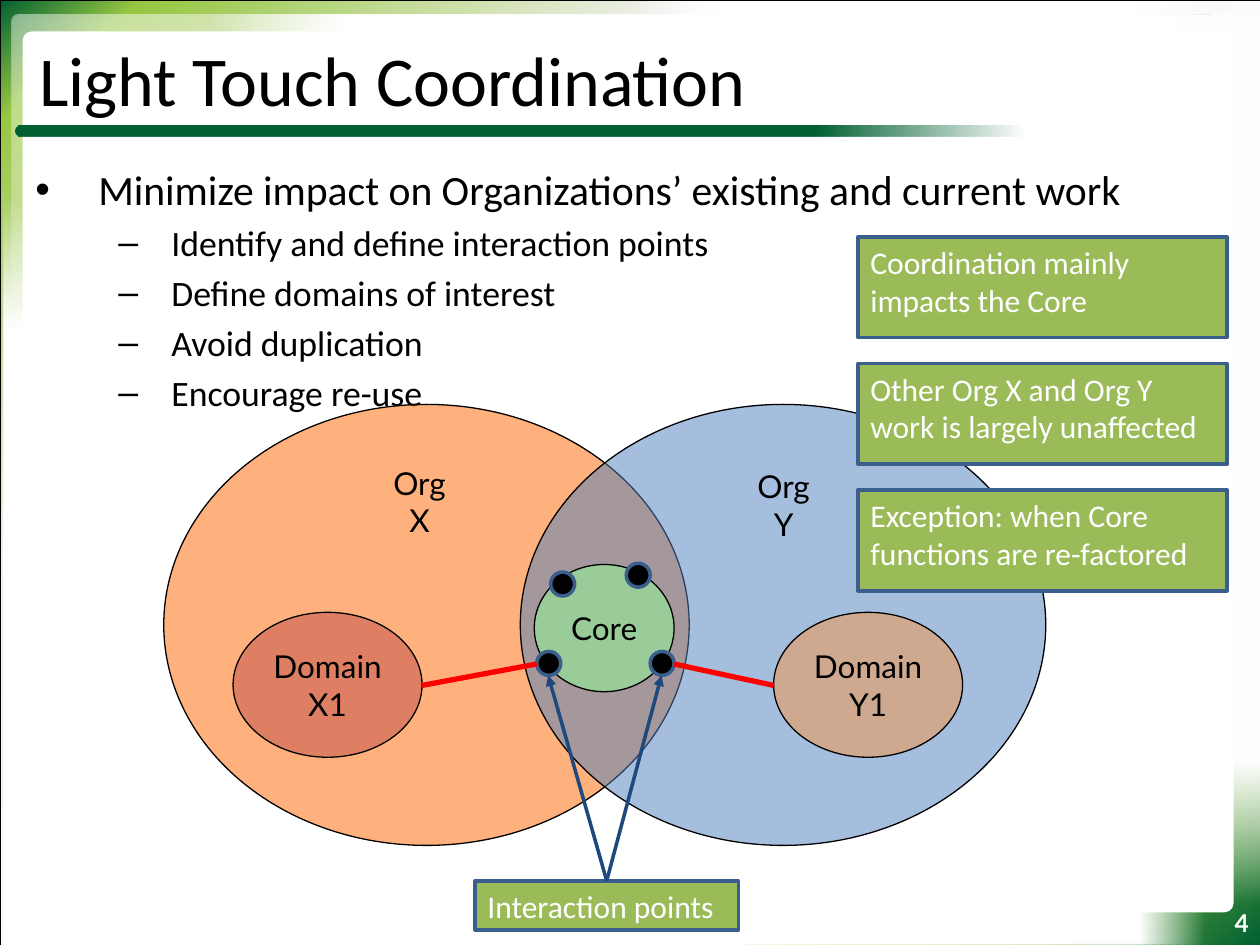
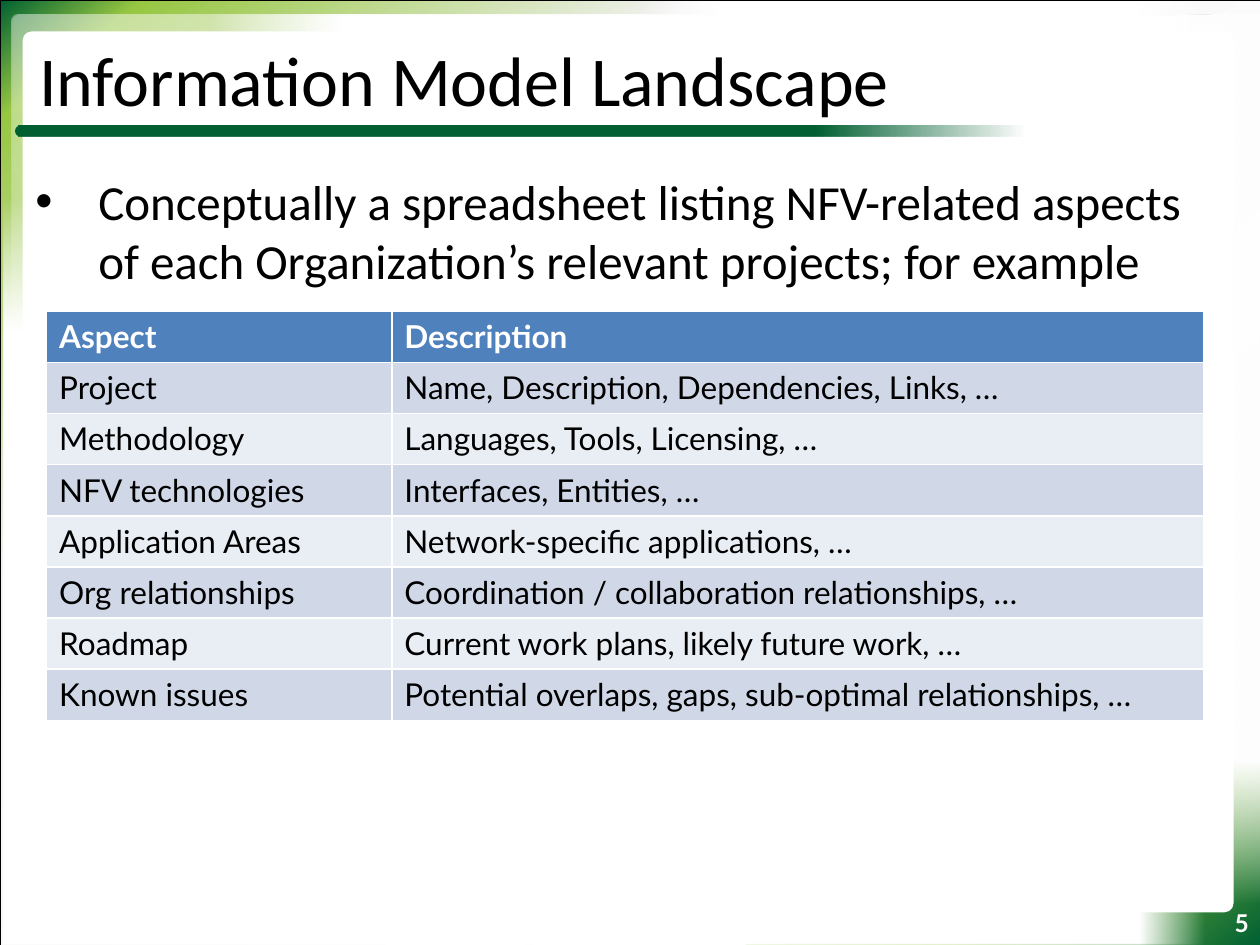
from dataclasses import dataclass

import pptx
import pptx.util
import pptx.dml.color
import pptx.enum.shapes
import pptx.enum.text
import pptx.oxml.ns
from lxml import etree


@dataclass(frozen=True)
class Theme:
    head: str = "Calibri"
    text: str = "Lato"
    black: str = "000000"
    white: str = "FFFFFF"
    pale: str = "F2F2F2"
    green: str = "006032"
    lime: str = "97C642"
    box: str = "9BBB59"
    edge: str = "3A5F8C"
    blue: str = "4F81BD"
    navy: str = "1F497D"
    red: str = "FF0000"
    core: str = "99CC99"
    bands: tuple = ("E9EDF4", "D0D8E8")
    title: float = 40
    lead: float = 28
    main: float = 23.8
    sub: float = 20.4
    label: float = 18
    num: float = 14


T = Theme()
KIND = pptx.enum.shapes.MSO_SHAPE
ALIGN = pptx.enum.text.PP_ALIGN
ANCHOR = pptx.enum.text.MSO_ANCHOR
RGB = pptx.dml.color.RGBColor.from_string
Pt = pptx.util.Pt
qn = pptx.oxml.ns.qn

deck = pptx.Presentation()
deck.slide_width = pptx.util.Inches(10)
deck.slide_height = pptx.util.Inches(7.5)
UNIT = deck.slide_width // 100  # the slide is a grid of 100 columns by 75 rows


def draw(shapes, kind, box, fill, edge=None, width=0.75):
    """Add a shape; fill is a colour, (colour, opacity) or (stops, angle)."""
    shape = shapes.add_shape(kind, *[round(n * UNIT) for n in box])
    shape.shadow.inherit = False
    paint, part = (fill, 100) if isinstance(fill, str) else fill
    if isinstance(paint, str):
        shape.fill.solid()
        shape.fill.fore_color.rgb = RGB(paint)
        if part < 100:
            tone = shape._element.spPr.find(".//" + qn("a:srgbClr"))
            etree.SubElement(tone, qn("a:alpha"), val=str(part * 1000))
    else:
        shape.fill.gradient()
        shape.fill.gradient_angle = -part % 360
        stops = shape._element.spPr.find(".//" + qn("a:gsLst"))
        for old in list(stops):
            stops.remove(old)
        for pos, color, alpha in paint:
            stop = etree.SubElement(stops, qn("a:gs"), pos=str(pos * 1000))
            tone = etree.SubElement(stop, qn("a:srgbClr"), val=color)
            etree.SubElement(tone, qn("a:alpha"), val=str(alpha * 1000))
    if edge:
        shape.line.color.rgb = RGB(edge)
        shape.line.width = Pt(width)
    else:
        shape.line.fill.background()
    return shape


def write(frame, text, size, face=T.text, color=T.black, align=ALIGN.LEFT,
          anchor=ANCHOR.TOP, bold=False):
    frame.text = text
    frame.word_wrap = True
    frame.auto_size = pptx.enum.text.MSO_AUTO_SIZE.NONE
    frame.vertical_anchor = anchor
    for para in frame.paragraphs:
        para.alignment = align
        for run in para.runs:
            run.font.size = Pt(size)
            run.font.name = face
            run.font.bold = bold
            run.font.color.rgb = RGB(color)


# Shared frame: drawn once, then moved to the layout
layout = deck.slide_layouts[1]
for holder in list(layout.placeholders):
    if holder.placeholder_format.idx >= 10:
        holder._element.getparent().remove(holder._element)
coord = deck.slides.add_slide(layout)
model = deck.slides.add_slide(layout)

clear = (T.white, 0)
solid = (T.white, 100)
sweep = [(0, T.green, 100), (6, T.lime, 100), (29, T.pale, 100),
         (69, T.white, 100), (87, T.lime, 100), (100, T.green, 100)]
veil = [(0, T.green, 48), (6, T.lime, 52), (34, T.pale, 50),
        (62, T.white, 48), (91, T.lime, 51), (100, T.green, 52)]
frame = [
    (KIND.RECTANGLE, (0, 0, 100.1, 75), (sweep, 50), T.black, 0.25),
    (KIND.ROUNDED_RECTANGLE, (0.9, 1.2, 95.6, 64.4), (veil, 140)),
    (KIND.RECTANGLE, (12.5, 1.2, 81.8, 68.8),
     ([(5, *clear), (18, *solid), (89, *solid)], 0)),
    (KIND.RECTANGLE, (0.3, 10, 49.1, 65),
     ([(9, *clear), (25, *solid), (87, *solid)], 90)),
    (KIND.RECTANGLE, (48.3, 0.1, 47.3, 74.9),
     ([(5, *clear), (18, *solid), (89, *solid), (100, *clear)], 0)),
    (KIND.RECTANGLE, (93.2, 1.2, 6.9, 71.2),
     ([(13, *solid), (83, *solid), (99, *clear)], 90)),
    (KIND.ROUNDED_RECTANGLE, (1.8, 2.5, 96.1, 69.9), T.white),
    (KIND.RECTANGLE, (42.3, 69.2, 16.9, 5.8), T.white),
    (KIND.OVAL, (1.2, 10, 0.6, 0.8), T.green),
    (KIND.RECTANGLE, (1.5, 10, 79.8, 0.8),
     ([(0, T.green, 100), (79, T.green, 100), (100, T.green, 0)], 0)),
]
for spot, part in enumerate(frame, 2):
    shape = draw(coord.shapes, *part)
    if part[0] == KIND.ROUNDED_RECTANGLE:
        shape.adjustments[0] = 0.01
    layout.shapes._spTree.insert(spot, shape._element)

# Titles, lists and numbers
pages = [
    (coord, "4", "Light Touch Coordination", (1.8, 12.5, 95.5, 20.2), T.main,
     ["Minimize impact on Organizations’ existing and current work",
      "Identify and define interaction points",
      "Define domains of interest", "Avoid duplication", "Encourage re-use"]),
    (model, "5", "Information Model Landscape", (1.8, 13.1, 95.5, 10), T.lead,
     ["Conceptually a spreadsheet listing NFV-related aspects of each "
      "Organization’s relevant projects; for example"]),
]
for slide, num, title, box, size, lines in pages:
    head, body = slide.shapes.title, slide.placeholders[1]
    tag = slide.shapes.add_textbox(0, 0, 0, 0)
    for item, place in ((head, (1.8, 2.5, 91.8, 7.5)), (body, box),
                        (tag, (95.7, 71.6, 4.4, 3.4))):
        item.left, item.top, item.width, item.height = [
            round(n * UNIT) for n in place]
    write(head.text_frame, title, T.title, T.head, anchor=ANCHOR.MIDDLE)
    head.text_frame.margin_left = head.text_frame.margin_right = round(1.3 * UNIT)
    head.text_frame.margin_top = head.text_frame.margin_bottom = round(0.7 * UNIT)
    write(tag.text_frame, num, T.num, color=T.white, align=ALIGN.RIGHT, bold=True)
    write(body.text_frame, "\n".join(lines), size, T.head)
    for row, para in enumerate(body.text_frame.paragraphs):
        para.level = min(row, 1)
        left, hang = (10.8, 4.2) if row else (5, 5)
        props = para._p.get_or_add_pPr()
        props.set("marL", str(round(left * UNIT)))
        props.set("indent", str(round(-hang * UNIT)))
        if row:
            para.runs[0].font.size = Pt(T.sub)
        else:
            para.space_before = Pt(0)

# Overlapping organizations
shapes = coord.shapes
for left, color in ((13, "FF6600"), (41.3, T.blue)):
    draw(shapes, KIND.OVAL, (left, 32.1, 41.7, 35), (color, 51), T.black)
for left, top, name in ((29.5, 36.3, "Org X"), (58.4, 36.6, "Org Y")):
    label = shapes.add_textbox(*[round(n * UNIT) for n in (left, top, 7.6, 4)])
    write(label.text_frame, name, T.label, align=ALIGN.CENTER)

# Callouts
notes = [
    ((37.7, 69.9, 20.9, 3.9), "Interaction points"),
    ((68.1, 18.8, 29.3, 8), "Coordination mainly impacts the Core"),
    ((68.1, 28.85, 29.3, 8), "Other Org X and Org Y work is largely unaffected"),
    ((68.1, 38.9, 29.3, 8), "Exception: when Core functions are re-factored"),
]
cards = []
for box, text in notes:
    card = draw(shapes, KIND.RECTANGLE, box, T.box, T.edge, 2)
    write(card.text_frame, text, T.label, T.head, T.white)
    cards.append(card)

# Domains, core and its interaction points
rounds = [
    ((18.5, 48.6, 15, 11.5), ("C0504D", 51), "Domain X1"),
    ((61.4, 48.6, 15, 11.5), ("F79646", 51), "Domain Y1"),
    ((42.4, 44.8, 11.1, 10.1), T.core, "Core"),
]
for box, fill, text in rounds:
    oval = draw(shapes, KIND.OVAL, box, fill, T.black)
    write(oval.text_frame, text, T.label, align=ALIGN.CENTER, anchor=ANCHOR.MIDDLE)
for left, top in ((42.6, 51.7), (51.6, 51.7), (43.7, 45.4), (49.7, 44.7)):
    draw(shapes, KIND.OVAL, (left, top, 1.9, 1.9), T.black, T.edge, 2)

links = [
    ((48.15, 69.9, 43.5, 53.6), T.navy, 2, True),
    ((48.15, 69.9, 52.5, 53.6), T.navy, 2, True),
    ((33.5, 54.4, 42.6, 52.7), T.red, 3, False),
    ((61.4, 54.4, 53.5, 52.7), T.red, 3, False),
]
for ends, color, width, arrow in links:
    link = shapes.add_connector(pptx.enum.shapes.MSO_CONNECTOR.STRAIGHT,
                                *[round(n * UNIT) for n in ends])
    link.line.color.rgb = RGB(color)
    link.line.width = Pt(width)
    if arrow:
        link.begin_connect(cards[0], 0)
        etree.SubElement(link.line._ln, qn("a:tailEnd"), type="triangle")
    etree.SubElement(link._element.spPr, qn("a:effectLst"))

# Table of aspects
rows = [
    ("Aspect", "Description"),
    ("Project", "Name, Description, Dependencies, Links, …"),
    ("Methodology", "Languages, Tools, Licensing, …"),
    ("NFV technologies", "Interfaces, Entities, …"),
    ("Application Areas", "Network-specific applications, …"),
    ("Org relationships", "Coordination / collaboration relationships, …"),
    ("Roadmap", "Current work plans, likely future work, …"),
    ("Known issues", "Potential overlaps, gaps, sub-optimal relationships, …"),
]
box = (3.7, 24.7, 91.8, 4.06 * len(rows))
table = model.shapes.add_table(len(rows), 2, *[round(n * UNIT) for n in box]).table
for col, width in zip(table.columns, (27.4, 64.4)):
    col.width = round(width * UNIT)
for r, row in enumerate(rows):
    for c, text in enumerate(row):
        cell = table.cell(r, c)
        cell.fill.solid()
        cell.fill.fore_color.rgb = RGB(T.bands[r % 2] if r else T.blue)
        cell.text = text
        font = cell.text_frame.paragraphs[0].runs[0].font
        font.name = T.text
        font.size = Pt(T.label)
        font.bold = r == 0
        font.color.rgb = RGB(T.black if r else T.white)

deck.save("out.pptx")
